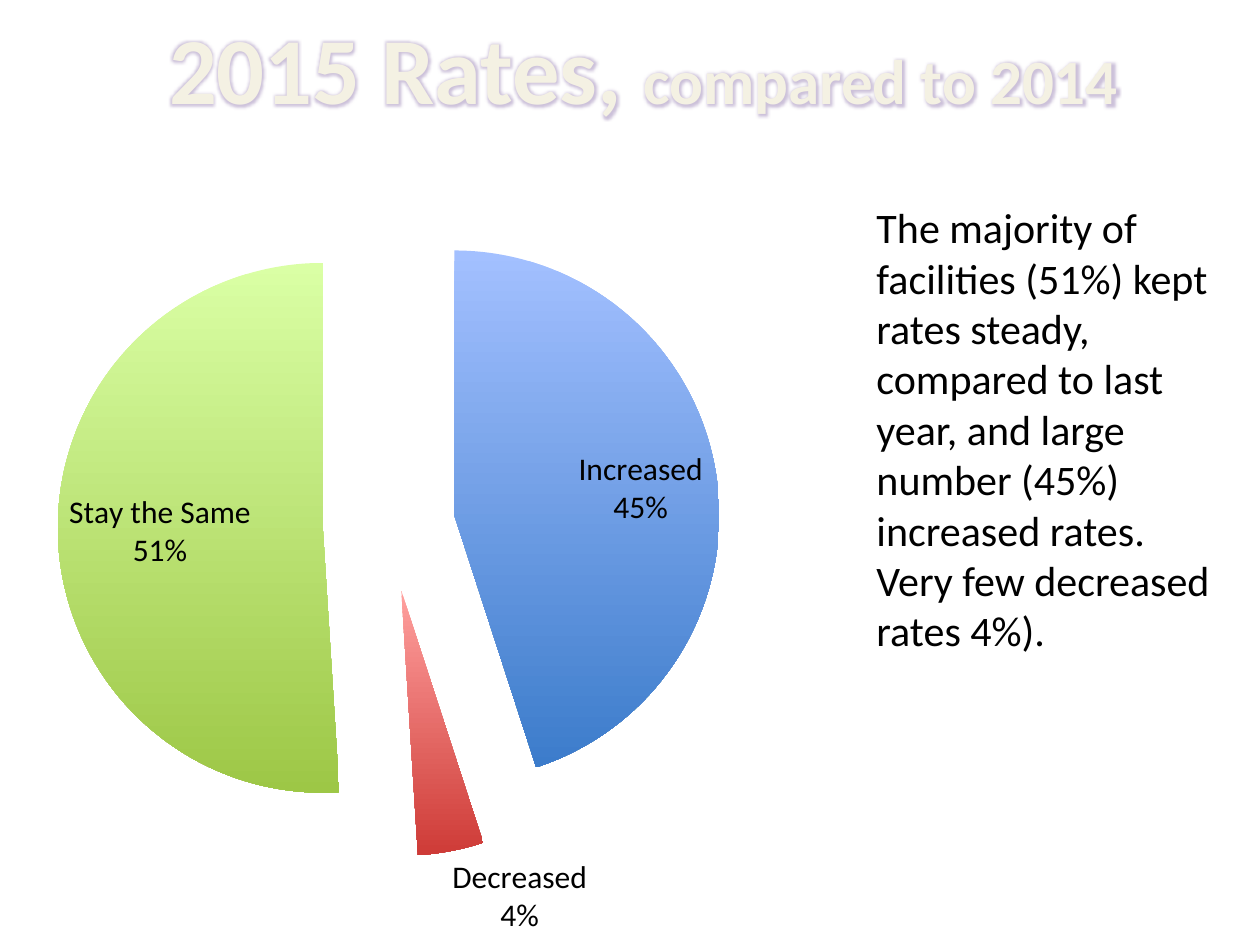
import pptx
import pptx.chart.data
import pptx.dml.color
import pptx.enum.chart
import pptx.enum.text
import pptx.util
from dataclasses import dataclass
from lxml import etree
from pptx.util import Cm, Pt


@dataclass(frozen=True)
class Theme:
    font: str = "Calibri"
    title: str = "F4F1E3"
    glow: str = "8064A2"
    text: str = "000000"
    title_size: int = 54
    subtitle_size: int = 36
    body_size: int = 24
    label_size: int = 18


theme = Theme()
# Answer, percentage, light and dark end of the slice gradient
rates = [
    ("Increased", 45, "A3C0FF", "3C7CCB"),
    ("Decreased", 4, "FFA09E", "CE3B37"),
    ("Stay the Same", 51, "DAFFA5", "9DC746"),
]


def rgb(value):
    return pptx.dml.color.RGBColor.from_string(value)


def set_font(font, size, color):
    font.name, font.size = theme.font, Pt(size)
    font.color.rgb = rgb(color)


prs = pptx.Presentation()
prs.slide_width, prs.slide_height = Cm(25.4), Cm(19.05)
slide = prs.slides.add_slide(prs.slide_layouts[5])

# Title with a soft glow around the letters
sp = slide.shapes.title
sp.left, sp.top, sp.width, sp.height = Cm(3.02), Cm(0.08), Cm(19.91), Cm(2.57)
tf = sp.text_frame
tf.word_wrap = False
tf.auto_size = pptx.enum.text.MSO_AUTO_SIZE.NONE
tf.vertical_anchor = pptx.enum.text.MSO_ANCHOR.TOP
p = tf.paragraphs[0]
p.alignment = pptx.enum.text.PP_ALIGN.CENTER
set_font(p.font, theme.title_size, theme.title)
p.font.bold = True
ns = "http://schemas.openxmlformats.org/drawingml/2006/main"
for text, size in [("2015 Rates, ", theme.title_size),
                   ("compared to 2014", theme.subtitle_size)]:
    r = p.add_run()
    r.text = text
    set_font(r.font, size, theme.title)
    glow = etree.fromstring(
        f'<a:effectLst xmlns:a="{ns}"><a:glow rad="63500">'
        f'<a:srgbClr val="{theme.glow}"><a:alpha val="40000"/></a:srgbClr>'
        '</a:glow></a:effectLst>')
    r.font.fill.solid()
    r.font.fill.fore_color.rgb = rgb(theme.title)
    r.font._element.find(f"{{{ns}}}solidFill").addnext(glow)

# Exploded pie of rate changes
data = pptx.chart.data.CategoryChartData()
data.categories = [name for name, *_ in rates]
data.add_series("Series 1", [value for _, value, *_ in rates])
chart = slide.shapes.add_chart(
    pptx.enum.chart.XL_CHART_TYPE.PIE_EXPLODED,
    Cm(-1.93), Cm(3.58), Cm(19.35), Cm(15.6), data).chart
chart.has_title = False
chart.has_legend = False
set_font(chart.font, theme.label_size, theme.text)
plot = chart.plots[0]
plot.vary_by_categories = True
series = plot.series[0]
for i, (_, _, light, dark) in enumerate(rates):
    fill = series.points[i].format.fill
    fill.gradient()
    fill.gradient_angle = 270
    for stop, color, position in zip(fill.gradient_stops, (light, dark), (0, 1)):
        stop.color.rgb = rgb(color)
        stop.position = position

# Slice labels
plot.has_data_labels = True
labels = plot.data_labels
labels.show_category_name = True
labels.show_percentage = True
labels.show_value = False
labels.number_format = "0%"
labels.number_format_is_linked = False
labels.position = pptx.enum.chart.XL_LABEL_POSITION.BEST_FIT
set_font(labels.font, theme.label_size, theme.text)

# Explosion and plot area need XML
chart_ns = "http://schemas.openxmlformats.org/drawingml/2006/chart"
for explosion in series._element.iter(f"{{{chart_ns}}}explosion"):
    explosion.set("val", "25")
area = chart._chartSpace.chart.plotArea
for old in area.findall(f"{{{chart_ns}}}layout"):
    area.remove(old)
area.insert(0, etree.fromstring(
    f'<c:layout xmlns:c="{chart_ns}"><c:manualLayout>'
    '<c:layoutTarget val="inner"/><c:xMode val="edge"/><c:yMode val="edge"/>'
    '<c:x val="0.16"/><c:y val="0.02"/><c:w val="0.69"/><c:h val="0.86"/>'
    '</c:manualLayout></c:layout>'))

# Commentary
sp = slide.shapes.add_textbox(Cm(17.42), Cm(3.94), Cm(7.34), Cm(9.5))
tf = sp.text_frame
tf.word_wrap = True
p = tf.paragraphs[0]
p.text = ("The majority of facilities (51%) kept rates steady, compared to last "
          "year, and large number (45%) increased rates. Very few decreased "
          "rates 4%).")
set_font(p.font, theme.body_size, theme.text)

prs.save("out.pptx")
